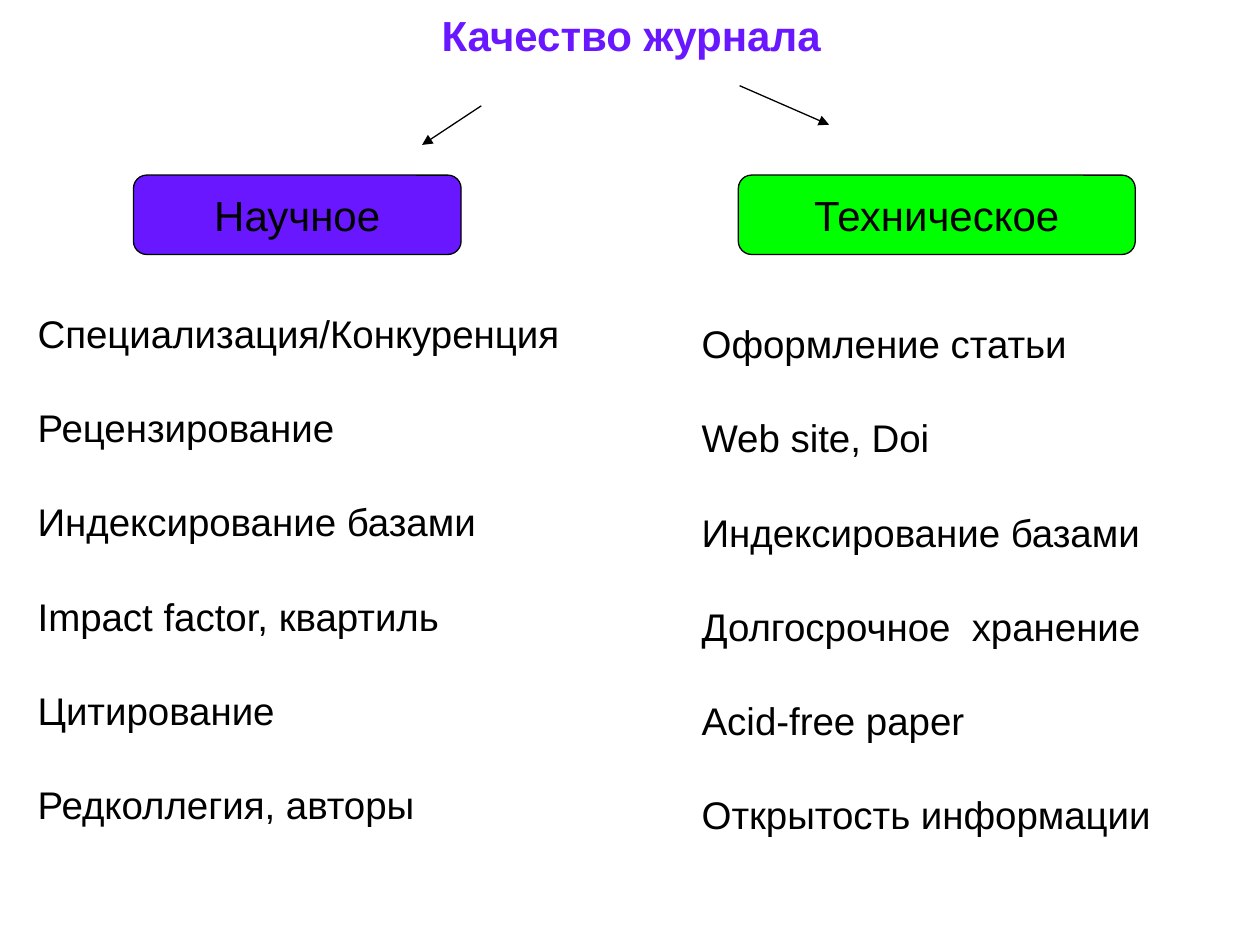
from lxml import etree
from pptx import Presentation
from pptx.dml.color import RGBColor
from pptx.enum import shapes, text
from pptx.oxml import ns
from pptx.util import Inches, Pt

FONT = "Arial"
BLACK = "000000"
VIOLET = "6817FF"
GREEN = "00FF00"
SCIENTIFIC = ["Специализация/Конкуренция", "Рецензирование", "Индексирование базами",
              "Impact factor, квартиль", "Цитирование", "Редколлегия, авторы"]
TECHNICAL = ["Оформление статьи", "Web site, Doi", "Индексирование базами",
             "Долгосрочное  хранение", "Acid-free paper", "Открытость информации"]


def color(value):
    """Return the colour for a hex string."""
    return RGBColor.from_string(value)


def add_run(paragraph, words, size, fill=BLACK, bold=False):
    """Append a formatted run to a paragraph."""
    run = paragraph.add_run()
    run.text = words
    run.font.name = FONT
    run.font.size = Pt(size)
    run.font.bold = bold
    run.font.color.rgb = color(fill)


def set_title(slide, words):
    """Place and format the slide title."""
    title = slide.shapes.title
    title.left, title.top = Inches(0.51), Inches(0)
    title.width, title.height = Inches(9), Inches(0.55)
    title.text_frame.vertical_anchor = text.MSO_ANCHOR.MIDDLE
    paragraph = title.text_frame.paragraphs[0]
    paragraph.alignment = text.PP_ALIGN.CENTER
    add_run(paragraph, words, 24, VIOLET, bold=True)


def add_heading(slide, words, left, width, fill):
    """Add a rounded box that heads a column."""
    shape = slide.shapes.add_shape(shapes.MSO_SHAPE.ROUNDED_RECTANGLE, Inches(left),
                                   Inches(1.39), Inches(width), Inches(0.63))
    shape.shadow.inherit = False
    shape.fill.solid()
    shape.fill.fore_color.rgb = color(fill)
    shape.line.color.rgb = color(BLACK)
    shape.line.width = Pt(0.75)
    frame = shape.text_frame
    frame.word_wrap = False
    frame.vertical_anchor = text.MSO_ANCHOR.MIDDLE
    paragraph = frame.paragraphs[0]
    paragraph.alignment = text.PP_ALIGN.CENTER
    add_run(paragraph, words, 24)


def add_arrow(slide, start, end):
    """Add a thin arrow between two points."""
    points = [Inches(value) for value in (*start, *end)]
    arrow = slide.shapes.add_connector(shapes.MSO_CONNECTOR.STRAIGHT, *points)
    arrow.line.color.rgb = color(BLACK)
    arrow.line.width = Pt(0.75)
    line = arrow.line._get_or_add_ln()
    etree.SubElement(line, ns.qn("a:tailEnd"), type="triangle")
    etree.SubElement(arrow._element.spPr, ns.qn("a:effectLst"))


def add_column(slide, items, left, top, width):
    """Add a text column with evenly spaced items."""
    box = slide.shapes.add_textbox(Inches(left), Inches(top), Inches(width), Inches(4.54))
    frame = box.text_frame
    frame.word_wrap = True
    for index, item in enumerate(items):
        paragraph = frame.add_paragraph() if index else frame.paragraphs[0]
        if index:
            paragraph.space_before = Pt(27.5)
        add_run(paragraph, item, 22)


def main():
    """Build the slide and save it."""
    presentation = Presentation()
    presentation.slide_width, presentation.slide_height = Inches(10), Inches(7.5)
    slide = presentation.slides.add_slide(presentation.slide_layouts[5])
    set_title(slide, "Качество журнала")
    add_heading(slide, "Научное", 1.06, 2.6, VIOLET)
    add_heading(slide, "Техническое", 5.86, 3.15, GREEN)
    add_arrow(slide, (3.82, 0.84), (3.35, 1.15))
    add_arrow(slide, (5.87, 0.68), (6.58, 0.99))
    add_column(slide, TECHNICAL, 5.47, 2.49, 4.21)
    add_column(slide, SCIENTIFIC, 0.2, 2.41, 5.12)
    presentation.save("out.pptx")


if __name__ == "__main__":
    main()
